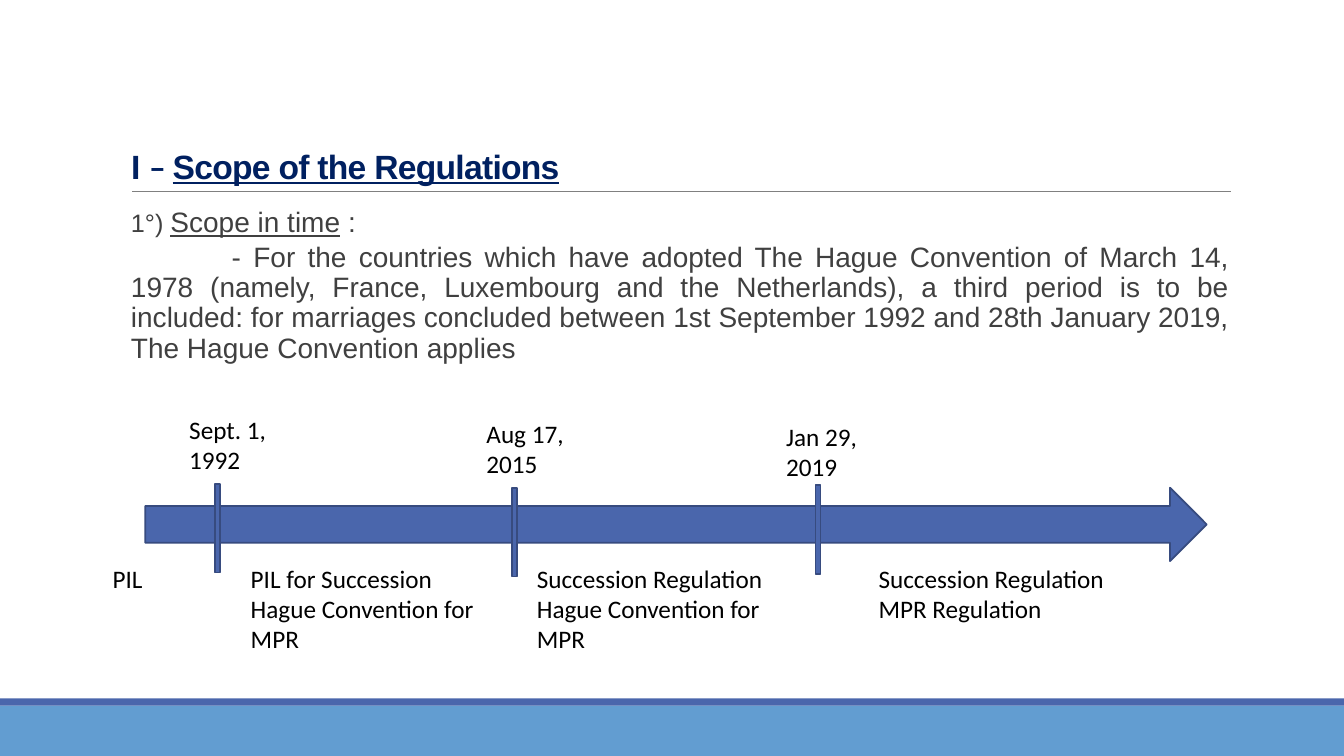
from lxml.etree import SubElement
from pptx import Presentation
from pptx.dml.color import RGBColor
from pptx.enum.shapes import MSO_CONNECTOR as Connector, MSO_SHAPE as Preset
from pptx.enum.text import MSO_ANCHOR as Anchor, MSO_AUTO_SIZE as AutoSize, PP_ALIGN as Align
from pptx.oxml.ns import qn
from pptx.util import Cm, Pt

WIDTH, HEIGHT = 33.87, 19.05
BLUE, EDGE, SKY, NAVY = "4A66AC", "374B7F", "629DD1", "002060"
GREY, RULE, BLACK = "404040", "808080", "000000"

MILESTONES = [
    ("Sept. 1, 1992", 0.86, -1.98, 1.75, -0.1),
    ("Aug 17, 2015", 8.35, -1.88, 9.24, 0),
    ("Jan 29, 2019", 15.9, -1.8, 16.89, -0.07),
]
PERIODS = [
    (["PIL"], -1.07, 3.12),
    (["PIL for Succession", "Hague Convention for", "MPR"], 2.41, 7.57),
    (["Succession Regulation", "Hague Convention for", "MPR"], 9.62, 7.57),
    (["Succession Regulation", "MPR Regulation"], 18.23, 7.06),
]


def color(value):
    return RGBColor.from_string(value)


def write(paragraph, text, size=18, font="Calibri", ink=BLACK, bold=False,
          underline=False, spacing=None):
    run = paragraph.add_run()
    run.text = text
    run.font.size = Pt(size)
    run.font.name = font
    run.font.bold = bold
    run.font.underline = underline
    run.font.color.rgb = color(ink)
    if spacing is not None:
        run.font._element.set("spc", str(round(spacing * 100)))


def add_block(slide, preset, left, top, width, height, fill, edge=None):
    block = slide.shapes.add_shape(preset, Cm(left), Cm(top), Cm(width), Cm(height))
    block.shadow.inherit = False
    block.fill.solid()
    block.fill.fore_color.rgb = color(fill)
    if edge:
        block.line.color.rgb = color(edge)
        block.line.width = Pt(1.25)
    else:
        block.line.fill.background()


def add_label(slide, lines, left, top, width, height):
    frame = slide.shapes.add_textbox(Cm(left), Cm(top), Cm(width), Cm(height)).text_frame
    frame.word_wrap = True
    for index, line in enumerate(lines):
        paragraph = frame.add_paragraph() if index else frame.paragraphs[0]
        write(paragraph, line)


def place(holder, left, top, width, height, anchor):
    holder.left, holder.top = Cm(left), Cm(top)
    holder.width, holder.height = Cm(width), Cm(height)
    frame = holder.text_frame
    frame.word_wrap = True
    frame.auto_size = AutoSize.NONE
    frame.vertical_anchor = anchor
    return frame


def add_footer(slide, left, top, width, height):
    stripe = 0.18
    add_block(slide, Preset.RECTANGLE, left, top + stripe, width, height - stripe, SKY)
    add_block(slide, Preset.RECTANGLE, left, top, width, stripe, BLUE)


def add_heading(slide, left, top, width, height):
    frame = place(slide.shapes.title, left, top, width, height, Anchor.BOTTOM)
    heading = frame.paragraphs[0]
    heading.alignment = Align.LEFT
    heading.line_spacing = 0.85
    style = dict(size=24, ink=NAVY, bold=True, spacing=-0.5)
    write(heading, "I ", font="Arial", **style)
    write(heading, "– ", **style)
    write(heading, "Scope of the Regulations", font="Arial", underline=True, **style)

    bottom = Cm(top + height)
    rule = slide.shapes.add_connector(
        Connector.STRAIGHT, Cm(left + 0.28), bottom, Cm(left + width + 0.02), bottom)
    rule.line.color.rgb = color(RULE)
    rule.line.width = Pt(0.5)
    SubElement(rule._element.spPr, qn("a:effectLst"))


def add_scope(slide, left, top, width, height):
    frame = place(slide.placeholders[1], left, top, width, height, Anchor.TOP)
    frame.margin_left = frame.margin_right = 0
    frame.margin_top = frame.margin_bottom = Cm(0.13)
    style = dict(size=20, font="Arial", ink=GREY)

    topic, rule = frame.paragraphs[0], frame.add_paragraph()
    for paragraph, indent in ((topic, 0), (rule, 2.54)):
        paragraph.alignment = Align.JUSTIFY
        paragraph.line_spacing = 0.9
        paragraph.space_before = Pt(0)
        paragraph.space_after = Pt(3)
        properties = paragraph._p.get_or_add_pPr()
        properties.set("marL", str(Cm(0.25)))
        properties.set("indent", str(Cm(indent)))
        SubElement(properties, qn("a:buNone"))

    write(topic, "1°) ", **{**style, "size": 18})
    write(topic, "Scope in time", underline=True, **style)
    write(topic, " :", **style)
    write(rule, "- For the countries which have adopted The Hague Convention of "
                "March 14, 1978 (namely, France, Luxembourg and the Netherlands), "
                "a third period is to be included: for marriages concluded between "
                "1st September 1992 and 28th January 2019, The Hague Convention "
                "applies", **style)


def add_timeline(slide, left, top, width, height):
    add_block(slide, Preset.RIGHT_ARROW, left, top, width, height, BLUE, EDGE)
    for date, date_x, date_y, mark_x, mark_y in MILESTONES:
        add_label(slide, [date], left + date_x, top + date_y, 3.12, 1.8)
        add_block(slide, Preset.RECTANGLE, left + mark_x, top + mark_y, 0.13, 2.24, BLUE, EDGE)
    for lines, period_x, period_width in PERIODS:
        add_label(slide, lines, left + period_x, top + 1.78, period_width,
                  0.25 + 0.77 * len(lines))


def main():
    deck = Presentation()
    deck.slide_width, deck.slide_height = Cm(WIDTH), Cm(HEIGHT)
    slide = deck.slides.add_slide(deck.slide_layouts[1])
    add_footer(slide, 0, 17.6, WIDTH, HEIGHT - 17.6)
    add_heading(slide, 3.05, 0.79, 27.94, 4.04)
    add_scope(slide, 3.05, 5.13, 27.94, 11.18)
    add_timeline(slide, 3.66, 12.29, 26.75, 1.85)
    deck.save("out.pptx")


if __name__ == "__main__":
    main()
